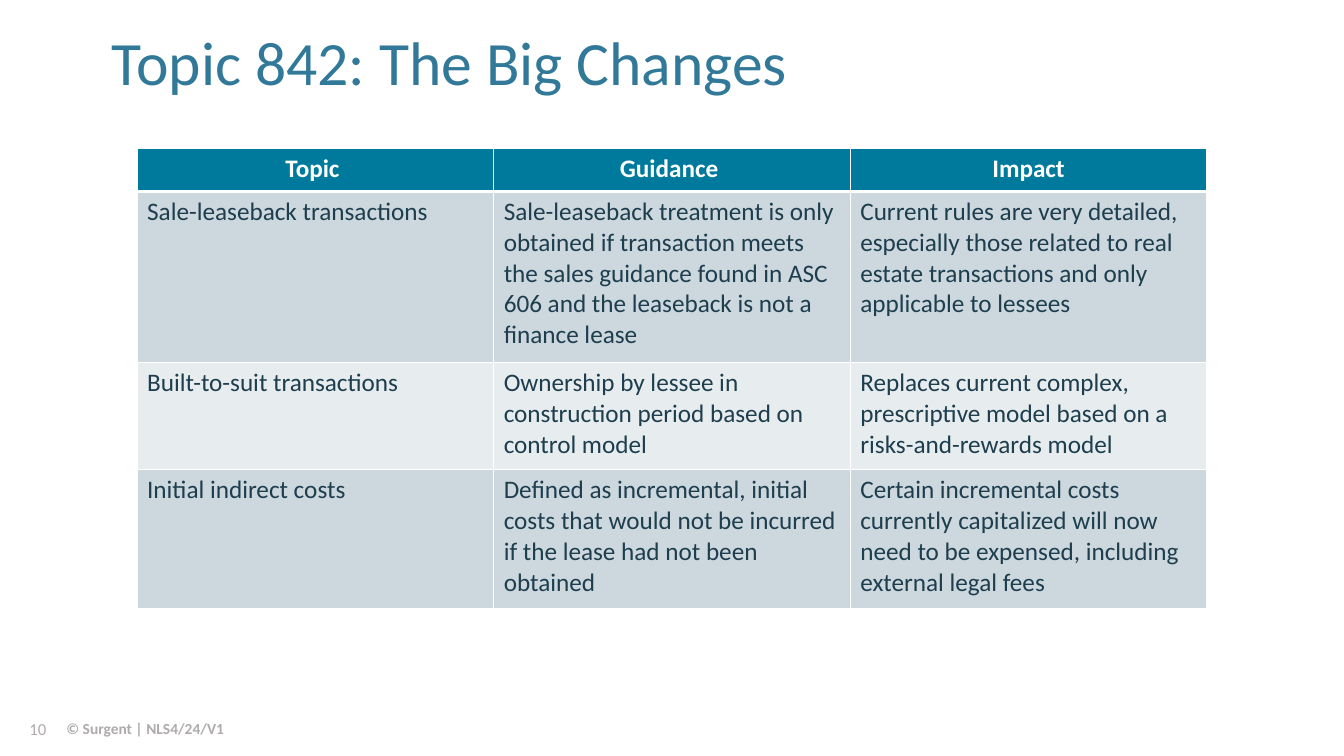
from dataclasses import dataclass

import lxml.etree
import pptx
import pptx.dml.color
import pptx.enum.text
import pptx.oxml.ns
import pptx.util

Inches = pptx.util.Inches
Align = pptx.enum.text.PP_ALIGN
Anchor = pptx.enum.text.MSO_ANCHOR


@dataclass(frozen=True)
class Theme:
    font: str = "Calibri"
    title: str = "327999"
    header: str = "007A9C"
    body: str = "1E3E4E"
    bands: tuple = ("CCD7DE", "E7ECEF")
    footer: str = "AFABAB"
    white: str = "FFFFFF"
    title_size: int = 44
    table_size: int = 18
    number_size: int = 12
    footer_size: int = 11
    border: int = 1
    header_rule: int = 3


class SlideBuilder:
    def __init__(self, slide, theme):
        self.slide = slide
        self.theme = theme

    def style(self, para, size, color, bold=False, align=Align.LEFT):
        para.alignment = align
        para.font.name = self.theme.font
        para.font.size = pptx.util.Pt(size)
        para.font.bold = bold
        para.font.color.rgb = pptx.dml.color.RGBColor.from_string(color)

    def text(self, words, place, size, color, bold=False, align=Align.LEFT, spacing=1):
        box = self.slide.shapes.add_textbox(*map(Inches, place))
        frame = box.text_frame
        frame.word_wrap = True
        frame.vertical_anchor = Anchor.MIDDLE
        para = frame.paragraphs[0]
        para.text = words
        para.line_spacing = spacing
        self.style(para, size, color, bold, align)

    def border(self, cell, side, width):
        """Draw one white cell edge; side is L, R, T or B. Call before filling."""
        qn = pptx.oxml.ns.qn
        line = lxml.etree.SubElement(
            cell._tc.get_or_add_tcPr(), qn(f"a:ln{side}"), w=str(pptx.util.Pt(width)))
        fill = lxml.etree.SubElement(line, qn("a:solidFill"))
        lxml.etree.SubElement(fill, qn("a:srgbClr"), val=self.theme.white)

    def table(self, rows, place, heights):
        theme = self.theme
        frame = self.slide.shapes.add_table(len(rows), len(rows[0]), *map(Inches, place))
        table = frame.table
        for row, height in zip(table.rows, heights):
            row.height = Inches(height)
        for r, words_in_row in enumerate(rows):
            is_header = r == 0
            fill = theme.header if is_header else theme.bands[(r - 1) % 2]
            widths = {"L": theme.border, "R": theme.border,
                      "T": theme.header_rule if r == 1 else theme.border,
                      "B": theme.header_rule if is_header else theme.border}
            for c, words in enumerate(words_in_row):
                cell = table.cell(r, c)
                for side, width in widths.items():
                    self.border(cell, side, width)
                cell.fill.solid()
                cell.fill.fore_color.rgb = pptx.dml.color.RGBColor.from_string(fill)
                para = cell.text_frame.paragraphs[0]
                para.text = words
                self.style(para, theme.table_size,
                           theme.white if is_header else theme.body, is_header,
                           Align.CENTER if is_header else Align.LEFT)


CHANGES = [
    ("Topic ", "Guidance ", "Impact"),
    ("Sale-leaseback transactions",
     "Sale-leaseback treatment is only obtained if transaction meets the sales "
     "guidance found in ASC 606 and the leaseback is not a finance lease",
     "Current rules are very detailed, especially those related to real estate "
     "transactions and only applicable to lessees"),
    ("Built-to-suit transactions",
     "Ownership by lessee in construction period based on control model",
     "Replaces current complex, prescriptive model based on a risks-and-rewards model"),
    ("Initial indirect costs",
     "Defined as incremental, initial costs that would not be incurred if the lease "
     "had not been obtained",
     "Certain incremental costs currently capitalized will now need to be expensed, "
     "including external legal fees"),
]


def main():
    deck = pptx.Presentation()
    deck.slide_width, deck.slide_height = Inches(13.33), Inches(7.5)
    theme = Theme()
    page = SlideBuilder(deck.slides.add_slide(deck.slide_layouts[6]), theme)
    page.text("Topic 842: The Big Changes", (1.01, 0.37, 11.75, 0.62),
              theme.title_size, theme.title, spacing=0.75)
    page.table(CHANGES, (1.36, 1.47, 10.61, 4.57), (0.43, 1.7, 1.06, 1.38))
    page.text("© Surgent | NLS4/24/V1", (0.56, 7.03, 2.11, 0.4),
              theme.footer_size, theme.footer, bold=True)
    page.text("10", (0, 7.03, 0.56, 0.4), theme.number_size, theme.footer,
              align=Align.RIGHT)
    deck.save("out.pptx")


if __name__ == "__main__":
    main()
